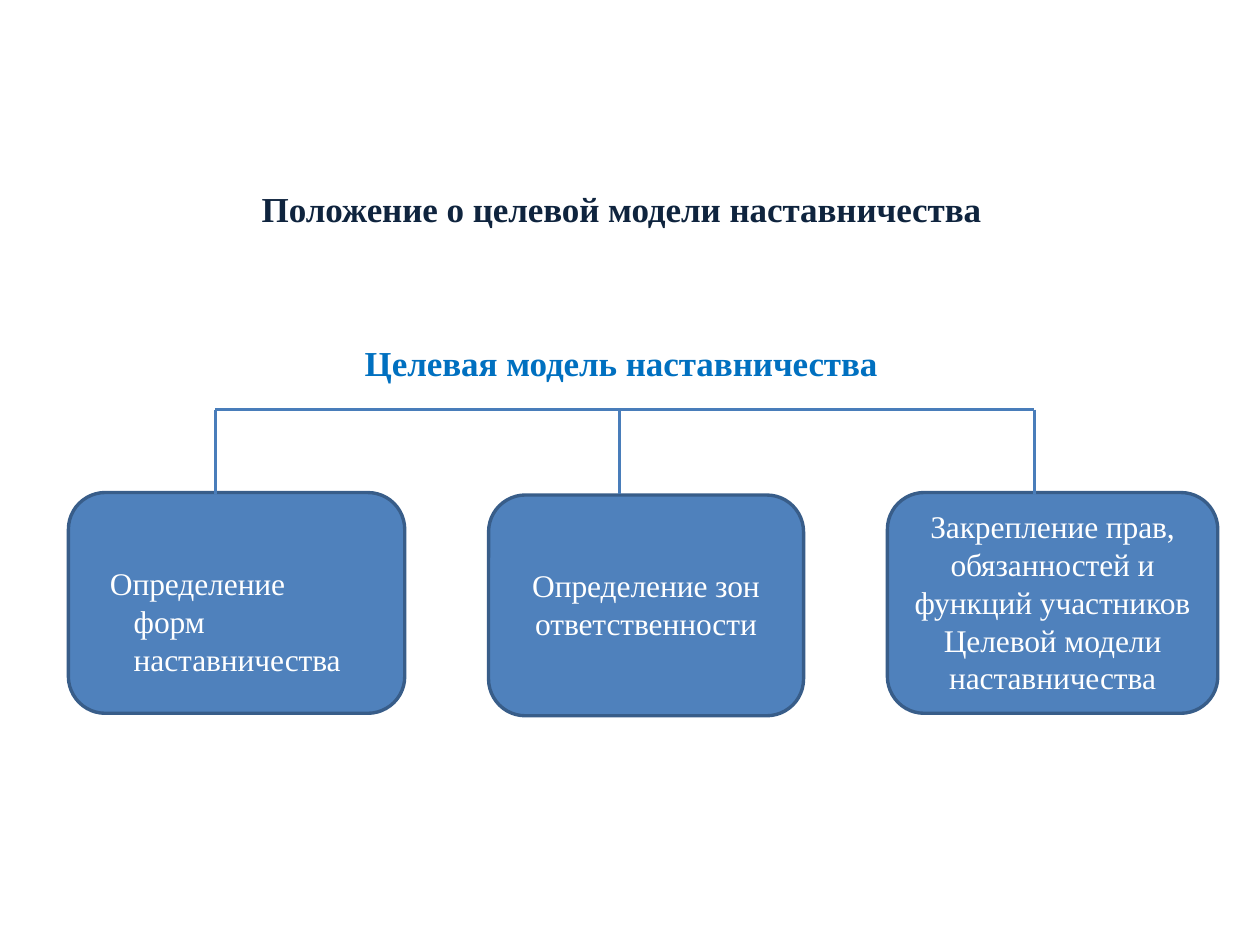
from pptx import Presentation
from pptx.dml.color import RGBColor
from pptx.enum.shapes import MSO_SHAPE
from pptx.enum.text import MSO_ANCHOR, PP_ALIGN
from pptx.util import Cm, Pt

FONT = "Times New Roman"
HUES = {"navy": "0F243E", "blue": "0070C0", "white": "FFFFFF",
        "fill": "4F81BC", "edge": "385D89", "line": "497DBA"}

# Headings: text, colour, left, top, width
HEADS = [
    ("Положение о целевой модели наставничества", "navy", 1.9, 3.77, 21.25),
    ("Целевая модель наставничества", "blue", 6.71, 6.89, 11.62),
]

# Branches: lines, left, top, width, stem position
BOXES = [
    (["Определение", "форм", "наставничества"], 1.38, 9.93, 6.78, 4.34),
    (["Определение зон", "ответственности"], 9.85, 9.98, 6.35, 12.49),
    (["Закрепление прав,", "обязанностей и", "функций участников",
      "Целевой модели", "наставничества"], 17.89, 9.93, 6.66, 20.85),
]
TALL = 4.45
BAR, FOOT = 8.26, 9.95


def rgb(name):
    return RGBColor.from_string(HUES[name])


def write(shape, lines, size, hue, bold=False):
    frame = shape.text_frame
    frame.word_wrap = True
    frame.margin_left = frame.margin_right = 0
    frame.margin_top = frame.margin_bottom = 0
    para = frame.paragraphs[0]
    para.alignment = PP_ALIGN.CENTER
    for i, line in enumerate(lines):
        if i:
            para.add_line_break()
        run = para.add_run()
        run.text = line
        font = run.font
        font.name, font.size, font.bold = FONT, Pt(size), bold
        font.color.rgb = rgb(hue)
        font._element.set("spc", "-5")
    return frame


deck = Presentation()
deck.slide_width, deck.slide_height = Cm(25.4), Cm(19.05)
slide = deck.slides.add_slide(deck.slide_layouts[6])

# Headings
for text, hue, x, y, wide in HEADS:
    head = slide.shapes.add_textbox(Cm(x), Cm(y), Cm(wide), Cm(0.85))
    write(head, [text], 20, hue, True)

# Branch boxes
frames = []
for lines, x, y, wide, stem in BOXES:
    box = slide.shapes.add_shape(
        MSO_SHAPE.ROUNDED_RECTANGLE, Cm(x), Cm(y), Cm(wide), Cm(TALL))
    box.shadow.inherit = False
    box.fill.solid()
    box.fill.fore_color.rgb = rgb("fill")
    box.line.color.rgb = rgb("edge")
    box.line.width = Pt(1.92)
    frame = write(box, lines, 18, "white")
    frame.vertical_anchor = MSO_ANCHOR.MIDDLE
    frame.margin_bottom = Cm(0.05)
    frames.append(frame)

# First box: left aligned, hanging indent, set lower
first = frames[0]
first.margin_left, first.margin_top = Cm(0.6), Cm(0.77)
para = first.paragraphs[0]
para.alignment = PP_ALIGN.LEFT
props = para._element.get_or_add_pPr()
props.set("marL", str(Cm(0.5)))
props.set("indent", str(Cm(-0.48)))

# Bracket: one bar with a stem to each box
stems = [box[-1] for box in BOXES]
path = slide.shapes.build_freeform(Cm(stems[0]), Cm(BAR))
path.add_line_segments([(Cm(stems[-1]), Cm(BAR))], close=False)
for x in stems:
    path.move_to(Cm(x), Cm(BAR))
    path.add_line_segments([(Cm(x), Cm(FOOT))], close=False)
tree = path.convert_to_shape()
tree.shadow.inherit = False
tree.fill.background()
tree.line.color.rgb = rgb("line")
tree.line.width = Pt(1.44)

deck.save("out.pptx")
